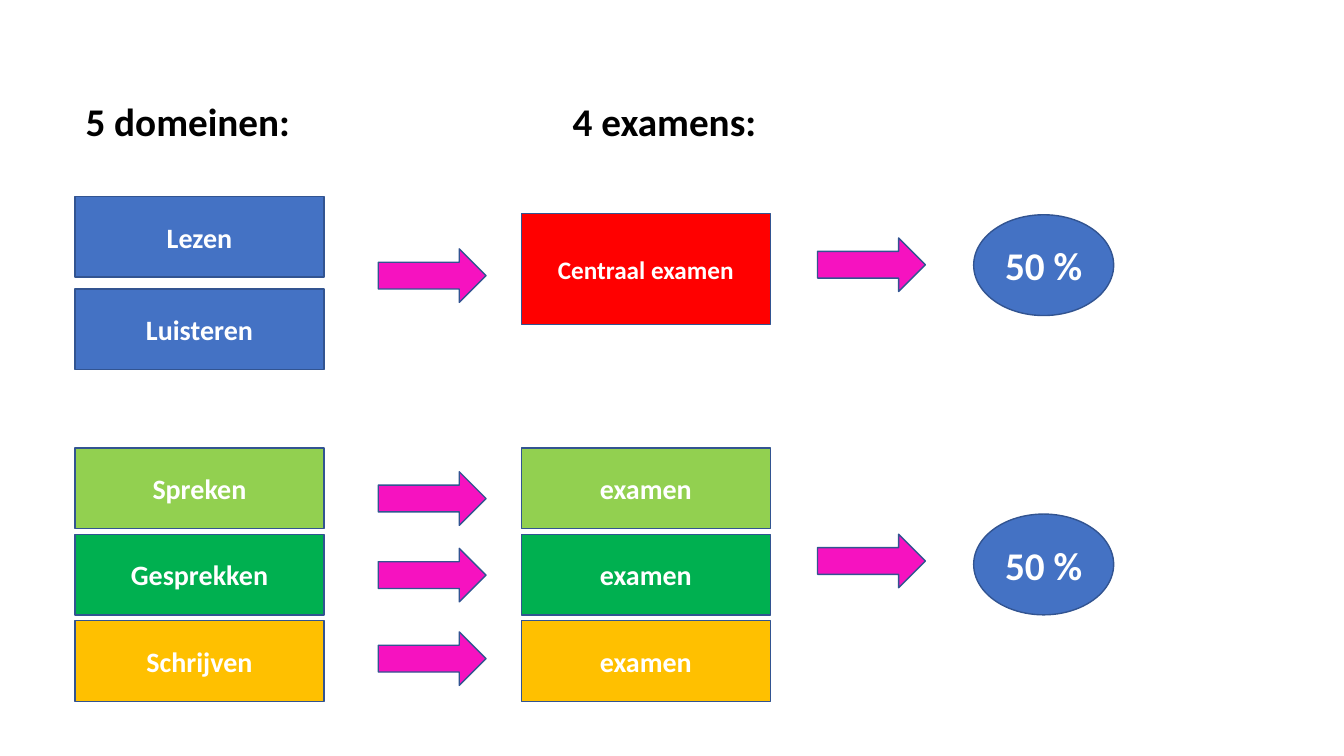
from lxml import etree
from pptx import Presentation
from pptx.dml.color import RGBColor
from pptx.enum.shapes import MSO_SHAPE as Preset
from pptx.enum.text import MSO_ANCHOR as Anchor, PP_ALIGN as Align
from pptx.oxml.ns import qn
from pptx.util import Pt

BLACK = RGBColor(0x00, 0x00, 0x00)
WHITE = RGBColor(0xFF, 0xFF, 0xFF)
BLUE = RGBColor(0x44, 0x72, 0xC4)
OUTLINE = RGBColor(0x32, 0x54, 0x91)
RED = RGBColor(0xFF, 0x00, 0x00)
LIME = RGBColor(0x92, 0xD0, 0x50)
GREEN = RGBColor(0x00, 0xB0, 0x50)
AMBER = RGBColor(0xFF, 0xC0, 0x00)
PINK = RGBColor(0xF6, 0x12, 0xC0)

DOMAIN_X, EXAM_X, SHARE_X = 53.5, 372.3, 695.5
LEFT_ARROW_X, RIGHT_ARROW_X = 270.2, 584
BOX_WIDTH, BOX_HEIGHT = 178, 57.6
SCHOOL_TOP, SCHOOL_STEP = 320, 61.7


def set_font(paragraph, size, color):
    paragraph.font.name = "Calibri"
    paragraph.font.size = Pt(size)
    paragraph.font.bold = True
    paragraph.font.color.rgb = color


def add_block(preset, left, top, width, height, fill, text="", size=20):
    """Add an outlined shape, with centred white text if any is given."""
    shape = slide.shapes.add_shape(preset, Pt(left), Pt(top), Pt(width), Pt(height))
    shape.shadow.inherit = False
    shape.fill.solid()
    shape.fill.fore_color.rgb = fill
    shape.line.color.rgb = OUTLINE
    shape.line.width = Pt(1)
    if text:
        shape.text_frame.vertical_anchor = Anchor.MIDDLE
        paragraph = shape.text_frame.paragraphs[0]
        paragraph.text = text
        paragraph.alignment = Align.CENTER
        set_font(paragraph, size, WHITE)


presentation = Presentation()
presentation.slide_width, presentation.slide_height = Pt(960), Pt(540)
slide = presentation.slides.add_slide(presentation.slide_layouts[6])

# Headings: a tab stop sets the second one above the exams
heading = slide.shapes.add_textbox(Pt(54), Pt(69.8), Pt(852), Pt(40))
heading.text_frame.word_wrap = True
paragraph = heading.text_frame.paragraphs[0]
paragraph.text = "5 domeinen:\t4 examens:"
paragraph.line_spacing = 0.9
tab_list = etree.SubElement(paragraph._p.get_or_add_pPr(), qn("a:tabLst"))
etree.SubElement(tab_list, qn("a:tab"), pos=str(Pt(348)), algn="l")
set_font(paragraph, 28, BLACK)

# Central exam and the domains it covers
for name, top in (("Lezen", 140.4), ("Luisteren", 206.6)):
    add_block(Preset.RECTANGLE, DOMAIN_X, top, BOX_WIDTH, BOX_HEIGHT, BLUE, name)
add_block(Preset.RECTANGLE, EXAM_X, 152.6, BOX_WIDTH, 79.2, RED, "Centraal examen", 18)

# Domains with an exam each
school_domains = (("Spreken", LIME), ("Gesprekken", GREEN), ("Schrijven", AMBER))
for row, (name, color) in enumerate(school_domains):
    top = SCHOOL_TOP + row * SCHOOL_STEP
    for left, text in ((DOMAIN_X, name), (EXAM_X, "examen")):
        add_block(Preset.RECTANGLE, left, top, BOX_WIDTH, BOX_HEIGHT, color, text)

# Arrows
for left, tops in (
    (LEFT_ARROW_X, (177.8, 337, 391.7, 451.4)),
    (RIGHT_ARROW_X, (170, 381.6)),
):
    for top in tops:
        add_block(Preset.RIGHT_ARROW, left, top, 77, 38.2, PINK)

# Share of the final mark
for top in (153.4, 367.2):
    add_block(Preset.OVAL, SHARE_X, top, 100, 72, BLUE, "50 %", 28)

presentation.save("out.pptx")
